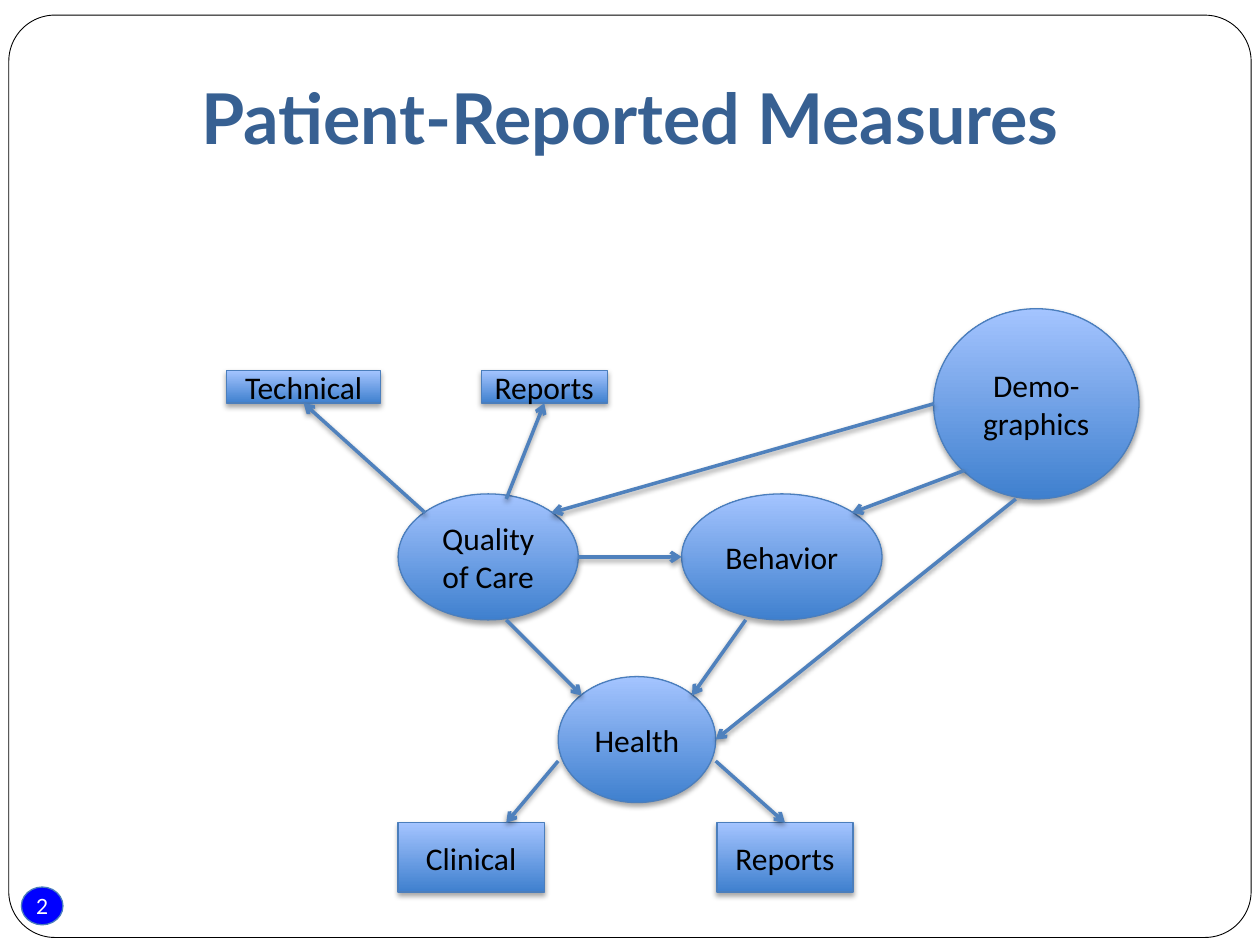
from lxml import etree
from pptx import Presentation
from pptx import util as u
from pptx.dml.color import RGBColor
from pptx.enum import shapes, text
from pptx.oxml.ns import qn

WIDTH, HEIGHT = 10, 7.5
NAVY = RGBColor(0x37, 0x60, 0x92)
BADGE_BLUE = RGBColor(0x00, 0x00, 0xFF)
DEEP_BLUE = RGBColor(0x3F, 0x80, 0xCE)
PALE_BLUE = RGBColor(0xA4, 0xC4, 0xFF)
EDGE_BLUE = RGBColor(0x4B, 0x7E, 0xBC)
ARROW_BLUE = RGBColor(0x4F, 0x81, 0xBD)
BLACK = RGBColor(0, 0, 0)
WHITE = RGBColor(255, 255, 255)

OVAL = shapes.MSO_SHAPE.OVAL
BOX = shapes.MSO_SHAPE.RECTANGLE
FRAME = shapes.MSO_SHAPE.ROUNDED_RECTANGLE

TITLE = "Patient-Reported Measures"

# Rows of the diagram: top and height
MEASURES, FACTORS, OUTCOME, RESULTS = (2.94, 0.26), (3.92, 1), (5.37, 1), (6.53, 0.55)
PEOPLE = (2.45, 1.51)

# Concept: (label, shape, left, width, row)
CONCEPTS = {
    "health": ("Health", OVAL, 4.43, 1.25, OUTCOME),
    "behavior": ("Behavior", OVAL, 5.41, 1.59, FACTORS),
    "quality": ("Quality of Care", OVAL, 3.16, 1.43, FACTORS),
    "demographics": ("Demo-graphics", OVAL, 7.41, 1.63, PEOPLE),
    "technical": ("Technical", BOX, 1.8, 1.22, MEASURES),
    "care reports": ("Reports", BOX, 3.82, 1, MEASURES),
    "clinical": ("Clinical", BOX, 3.16, 1.16, RESULTS),
    "health reports": ("Reports", BOX, 5.69, 1.08, RESULTS),
}

# Anchors as shares of a concept's width and height
LEFT, RIGHT, TOP, BOTTOM = (0, 0.5), (1, 0.5), (0.5, 0), (0.5, 1)
UPPER_LEFT, UPPER_RIGHT, LOWER_LEFT = (0.15, 0.15), (0.85, 0.15), (0.15, 0.85)
SITES = {TOP: 0, LEFT: 1, BOTTOM: 2, RIGHT: 3}

INFLUENCES = [
    ("quality", RIGHT, "behavior", LEFT),
    ("quality", (0.6, 1), "health", UPPER_LEFT),
    ("behavior", (0.32, 1), "health", UPPER_RIGHT),
    ("demographics", LEFT, "quality", UPPER_RIGHT),
    ("demographics", LOWER_LEFT, "behavior", UPPER_RIGHT),
    ("demographics", (0.4, 1), "health", RIGHT),
    ("quality", (0.6, 0.04), "care reports", BOTTOM),
    ("quality", UPPER_LEFT, "technical", BOTTOM),
    ("health", (0, 0.67), "clinical", (0.74, 0)),
    ("health", (1, 0.67), "health reports", TOP),
]


def write(shape, words, *, font, size, color, bold=False, margin=None):
    frame = shape.text_frame
    frame.word_wrap = True
    frame.vertical_anchor = text.MSO_ANCHOR.MIDDLE
    if margin is not None:
        frame.margin_left = frame.margin_right = u.Inches(margin)
        frame.margin_top = frame.margin_bottom = u.Inches(margin)
    paragraph = frame.paragraphs[0]
    paragraph.alignment = text.PP_ALIGN.CENTER
    run = paragraph.add_run()
    run.text = words
    run.font.name, run.font.size, run.font.bold = font, u.Pt(size), bold
    run.font.color.rgb = color


def add_outline(slide, kind, left, top, width, height, *, line, weight):
    shape = slide.shapes.add_shape(kind, *map(u.Inches, (left, top, width, height)))
    shape.shadow.inherit = False
    shape.line.color.rgb = line
    shape.line.width = u.Pt(weight)
    return shape


def cast_shadow(effects, distance, opacity):
    shadow = etree.SubElement(
        effects, qn("a:outerShdw"), blurRad=str(u.Pt(3.1)), dist=str(u.Pt(distance)),
        dir="5400000", rotWithShape="0")
    tint = etree.SubElement(shadow, qn("a:srgbClr"), val=str(BLACK))
    etree.SubElement(tint, qn("a:alpha"), val=str(opacity * 1000))


def add_concept(slide, label, kind, left, width, row):
    top, height = row
    shape = add_outline(slide, kind, left, top, width, height, line=EDGE_BLUE, weight=0.75)
    shape.fill.gradient()
    shape.fill.gradient_angle = 90
    for stop, color, position in zip(shape.fill.gradient_stops, (DEEP_BLUE, PALE_BLUE), (0, 1)):
        stop.color.rgb = color
        stop.position = position
    cast_shadow(shape.element.spPr.find(qn("a:effectLst")), 1.8, 35)
    write(shape, label, font="Calibri", size=18, color=BLACK)
    return shape


def anchor_point(shape, anchor):
    across, down = anchor
    return int(shape.left + across * shape.width), int(shape.top + down * shape.height)


def add_influence(slide, cause, start, effect, end):
    arrow = slide.shapes.add_connector(
        shapes.MSO_CONNECTOR.STRAIGHT, *anchor_point(cause, start), *anchor_point(effect, end))
    if effect.auto_shape_type == BOX and end in SITES:
        arrow.end_connect(effect, SITES[end])
    arrow.line.color.rgb = ARROW_BLUE
    arrow.line.width = u.Pt(2)
    properties = arrow.element.spPr
    etree.SubElement(properties.find(qn("a:ln")), qn("a:tailEnd"), type="arrow")
    cast_shadow(etree.SubElement(properties, qn("a:effectLst")), 1.6, 38)


def main():
    deck = Presentation()
    deck.slide_width, deck.slide_height = u.Inches(WIDTH), u.Inches(HEIGHT)
    slide = deck.slides.add_slide(deck.slide_layouts[5])

    # Title
    title = slide.shapes.title
    title.left, title.top, title.width, title.height = map(u.Inches, (0.5, 0.3, 9, 1.25))
    write(title, TITLE, font="Lato", size=40, color=NAVY, bold=True)

    # Page number and frame
    badge = add_outline(slide, OVAL, 0.17, 7.04, 0.33, 0.3, line=EDGE_BLUE, weight=0.75)
    badge.fill.solid()
    badge.fill.fore_color.rgb = BADGE_BLUE
    write(badge, "2", font="Lato", size=12, color=WHITE, margin=0)
    border = add_outline(slide, FRAME, 0.07, 0.12, 9.86, 7.32, line=BLACK, weight=0.5)
    border.adjustments[0] = 0.05
    border.fill.background()

    # Concepts and the arrows between them
    placed = {key: add_concept(slide, *concept) for key, concept in CONCEPTS.items()}
    for cause, start, effect, end in INFLUENCES:
        add_influence(slide, placed[cause], start, placed[effect], end)

    deck.save("out.pptx")


if __name__ == "__main__":
    main()
